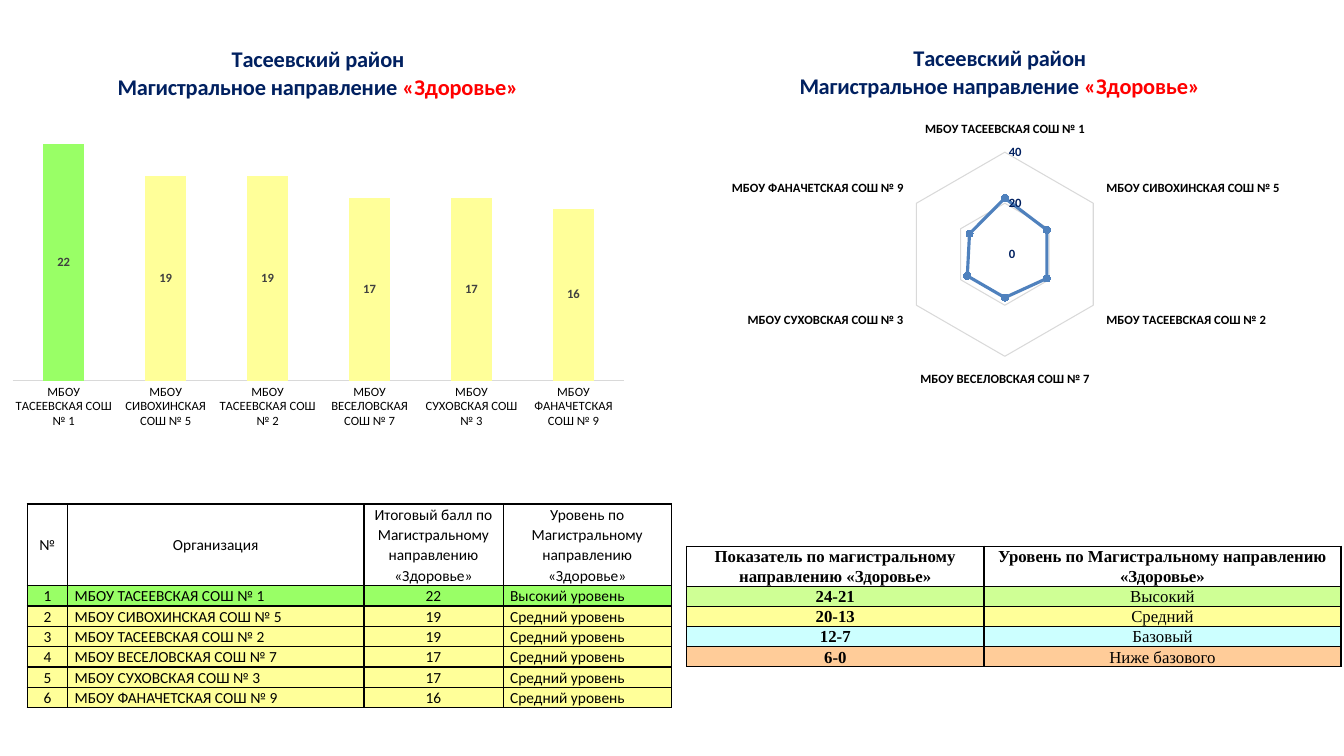
from lxml import etree
from pptx import Presentation
from pptx.chart.data import CategoryChartData
from pptx.dml.color import RGBColor
from pptx.enum.chart import (XL_CHART_TYPE, XL_LABEL_POSITION, XL_MARKER_STYLE,
                             XL_TICK_LABEL_POSITION, XL_TICK_MARK)
from pptx.enum.text import MSO_ANCHOR, PP_ALIGN
from pptx.oxml import parse_xml
from pptx.oxml.ns import nsdecls, qn
from pptx.util import Inches, Pt

CENTER, LEFT = PP_ALIGN.CENTER, PP_ALIGN.LEFT
TOP, MIDDLE = MSO_ANCHOR.TOP, MSO_ANCHOR.MIDDLE
NO_TICK = XL_TICK_MARK.NONE

# Content
DISTRICT = "Тасеевский район"
DIRECTION = "Магистральное направление "
TOPIC = "«Здоровье»"
HIGH, MEDIUM = "Высокий уровень", "Средний уровень"
SCHOOLS = [
    ("МБОУ ТАСЕЕВСКАЯ СОШ № 1", 22, HIGH),
    ("МБОУ СИВОХИНСКАЯ СОШ № 5", 19, MEDIUM),
    ("МБОУ ТАСЕЕВСКАЯ СОШ № 2", 19, MEDIUM),
    ("МБОУ ВЕСЕЛОВСКАЯ СОШ № 7", 17, MEDIUM),
    ("МБОУ СУХОВСКАЯ СОШ № 3", 17, MEDIUM),
    ("МБОУ ФАНАЧЕТСКАЯ СОШ № 9", 16, MEDIUM),
]
RATING_HEADER = ("№", "Организация",
                 "Итоговый балл по Магистральному направлению «Здоровье»",
                 "Уровень по Магистральному направлению «Здоровье»")
SCALE_HEADER = ("Показатель по магистральному направлению «Здоровье»",
                "Уровень по Магистральному направлению «Здоровье»")
SCALE = [("24-21", "Высокий"), ("20-13", "Средний"),
         ("12-7", "Базовый"), ("6-0", "Ниже базового")]

THEME = {
    "sans": "Calibri", "serif": "Times New Roman",
    "title": "002060", "topic": "FF0000", "text": "000000", "value": "404040",
    "grid": "D9D9D9", "radar": "4F81BD",
    "levels": {HIGH: "99FF66", MEDIUM: "FFFF99"},
    "scale": ["CFFF95", "FFFF99", "CCFFFF", "FFCC99"],
    "title_size": 16, "chart_size": 10, "label_size": 9,
    "rating_size": 11, "scale_size": 12,
}


def rgb(key):
    return RGBColor.from_string(THEME.get(key, key))


def style(font, size, color, bold=False, face="sans"):
    font.name, font.size, font.bold = THEME[face], Pt(THEME[size]), bold
    font.color.rgb = rgb(color)


def set_layout(parent, after, **fractions):
    """Place a chart part by fractions of the chart area."""
    for old in parent.findall(qn("c:layout")):
        parent.remove(old)
    layout = etree.Element(qn("c:layout"))
    manual = etree.SubElement(layout, qn("c:manualLayout"))
    if "w" in fractions:
        etree.SubElement(manual, qn("c:layoutTarget")).set("val", "inner")
    for axis in "xy":
        etree.SubElement(manual, qn(f"c:{axis}Mode")).set("val", "edge")
    for side, value in fractions.items():
        etree.SubElement(manual, qn(f"c:{side}")).set("val", str(value))
    if after is None:
        parent.insert(0, layout)
    else:
        after.addnext(layout)


def add_school_chart(slide, kind, box, title_at, plot):
    data = CategoryChartData()
    data.categories = [school for school, _, _ in SCHOOLS]
    data.add_series("Series 1", [score for _, score, _ in SCHOOLS])
    chart = slide.shapes.add_chart(kind, *map(Inches, box), data).chart
    chart.has_legend = False
    style(chart.font, "chart_size", "text")
    # Two-line title
    chart.has_title = True
    heading = chart.chart_title.text_frame
    heading.text = DISTRICT
    direction = heading.add_paragraph()
    for words in (DIRECTION, TOPIC):
        direction.add_run().text = words
    for paragraph in heading.paragraphs:
        paragraph.alignment = CENTER
        for run in paragraph.runs:
            color = "topic" if run.text == TOPIC else "title"
            style(run.font, "title_size", color, True)
    title = chart.chart_title._element
    set_layout(title, title.find(qn("c:tx")), x=title_at[0], y=title_at[1])
    set_layout(chart._chartSpace.chart.plotArea, None, **dict(zip("xywh", plot)))
    # Axes shared by both charts
    category, value = chart.category_axis, chart.value_axis
    for axis in (category, value):
        axis.major_tick_mark = axis.minor_tick_mark = NO_TICK
    category.has_major_gridlines = False
    category.format.line.color.rgb = rgb("grid")
    value.minimum_scale = 0
    value.format.line.fill.background()
    return chart


def style_cell(cell, text, size, face, align, anchor, fill=None, bold=False):
    cell.text_frame.text = text
    paragraph = cell.text_frame.paragraphs[0]
    paragraph.alignment, paragraph.line_spacing = align, 1.07
    style(paragraph.runs[0].font, size, "text", bold, face)
    cell.vertical_anchor = anchor
    cell.margin_left = cell.margin_right = Inches(0.07)
    cell.margin_top = cell.margin_bottom = 0
    for side in "LRTB":
        cell._tc.get_or_add_tcPr().append(parse_xml(
            f'<a:ln{side} {nsdecls("a")} w="{Pt(1)}"><a:solidFill>'
            f'<a:srgbClr val="{THEME["text"]}"/></a:solidFill></a:ln{side}>'))
    if fill:
        cell.fill.solid()
        cell.fill.fore_color.rgb = rgb(fill)
    else:
        cell.fill.background()


def add_grid(slide, left, top, widths, heights):
    table = slide.shapes.add_table(
        len(heights), len(widths), Inches(left), Inches(top),
        Inches(sum(widths)), Inches(sum(heights))).table
    table.first_row = table.horz_banding = False
    for column, width in zip(table.columns, widths):
        column.width = Inches(width)
    for row, height in zip(table.rows, heights):
        row.height = Inches(height)
    return table


def add_columns(slide):
    chart = add_school_chart(slide, XL_CHART_TYPE.COLUMN_STACKED, (0, 0.25, 6.32, 4.1),
                             (0.18, 0.04), (0.02, 0.21, 0.96, 0.65))
    style(chart.category_axis.tick_labels.font, "label_size", "text")
    chart.category_axis.format.line.width = Pt(1)
    chart.value_axis.maximum_scale = 25
    chart.value_axis.has_major_gridlines = False
    chart.value_axis.tick_label_position = XL_TICK_LABEL_POSITION.NONE
    chart.value_axis.visible = False
    plot = chart.plots[0]
    plot.gap_width, plot.overlap, plot.vary_by_categories = 150, 100, False
    scores = plot.series[0]
    scores.format.fill.solid()
    scores.format.fill.fore_color.rgb = rgb(THEME["levels"][MEDIUM])
    for i, (_, _, level) in enumerate(SCHOOLS):
        if level != MEDIUM:
            fill = scores.points[i].format.fill
            fill.solid()
            fill.fore_color.rgb = rgb(THEME["levels"][level])
    labels = scores.data_labels
    labels.show_value, labels.position = True, XL_LABEL_POSITION.CENTER
    style(labels.font, "label_size", "value", True)


def add_radar(slide):
    chart = add_school_chart(slide, XL_CHART_TYPE.RADAR_MARKERS, (6.67, 0.25, 6.47, 3.88),
                             (0.19, 0.04), (0.353, 0.295, 0.313, 0.582))
    style(chart.category_axis.tick_labels.font, "label_size", "text", True)
    chart.category_axis.format.line.width = Pt(0.75)
    value = chart.value_axis
    value.maximum_scale, value.major_unit = 40, 20
    style(value.tick_labels.font, "label_size", "title", True)
    value.tick_labels.number_format = "General"
    value.tick_labels.number_format_is_linked = False
    value.has_major_gridlines = True
    value.major_gridlines.format.line.color.rgb = rgb("grid")
    value.major_gridlines.format.line.width = Pt(0.75)
    chart.plots[0].vary_by_categories = False
    scores = chart.plots[0].series[0]
    scores.smooth = False
    scores.format.line.color.rgb = rgb("radar")
    scores.format.line.width = Pt(2.25)
    scores.marker.style, scores.marker.size = XL_MARKER_STYLE.CIRCLE, 5
    scores.marker.format.fill.solid()
    scores.marker.format.fill.fore_color.rgb = rgb("radar")
    scores.marker.format.line.color.rgb = rgb("radar")


def main():
    deck = Presentation()
    deck.slide_width, deck.slide_height = Inches(13.33), Inches(7.5)
    slide = deck.slides.add_slide(deck.slide_layouts[6])
    add_columns(slide)

    # School rating
    rating = add_grid(slide, 0.27, 5, [0.4, 2.94, 1.38, 1.67], [0.81] + [0.2] * len(SCHOOLS))
    rows = [(RATING_HEADER, None)]
    rows += [((str(i), school, str(score), level), THEME["levels"][level])
             for i, (school, score, level) in enumerate(SCHOOLS, 1)]
    for r, (texts, fill) in enumerate(rows):
        for c, text in enumerate(texts):
            align = LEFT if r and c in (1, 3) else CENTER
            style_cell(rating.cell(r, c), text, "rating_size", "sans", align, MIDDLE, fill)

    add_radar(slide)

    # Scale of levels
    scale = add_grid(slide, 6.81, 5.42, [2.95, 3.54], [0.39] + [0.2] * len(SCALE))
    for r, (texts, fill) in enumerate(zip([SCALE_HEADER] + SCALE, [None] + THEME["scale"])):
        for c, text in enumerate(texts):
            style_cell(scale.cell(r, c), text, "scale_size", "serif", CENTER,
                       MIDDLE if r else TOP, fill, bold=r == 0 or c == 0)
    deck.save("out.pptx")


if __name__ == "__main__":
    main()
